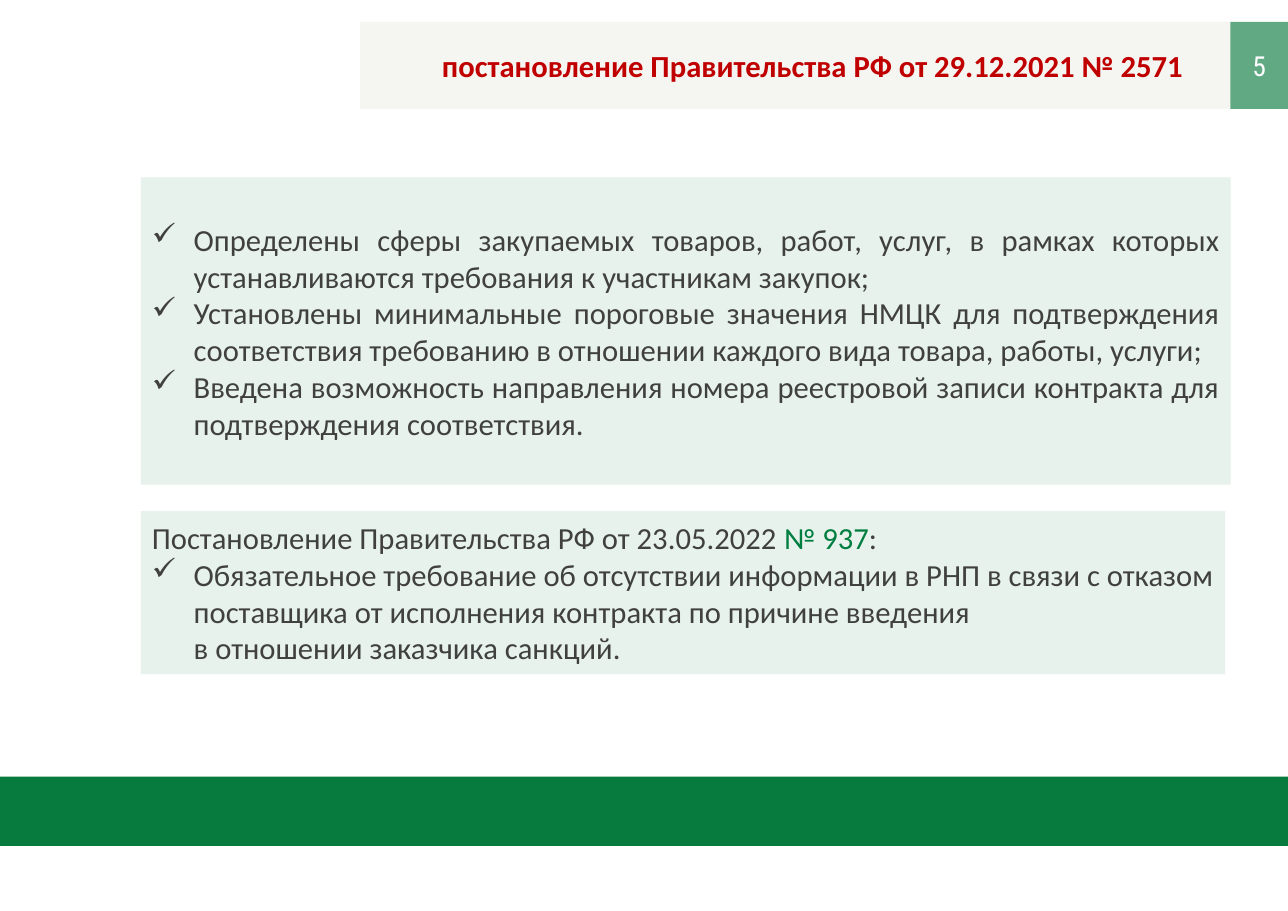
import pptx
import pptx.util
import pptx.dml.color
import pptx.enum.shapes
import pptx.enum.text
import pptx.oxml.ns
from lxml import etree

RGBColor = pptx.dml.color.RGBColor
ALIGN = pptx.enum.text.PP_ALIGN

GREEN = RGBColor(0x07, 0x7A, 0x3E)
LINK_GREEN = RGBColor(0x00, 0x7E, 0x40)
PALE_GREEN = RGBColor(0xE7, 0xF2, 0xEC)
PALE_GREY = RGBColor(0xF5, 0xF6, 0xF1)
RED = RGBColor(0xC0, 0x00, 0x00)
DARK = RGBColor(0x40, 0x40, 0x40)
WHITE = RGBColor(0xFF, 0xFF, 0xFF)

SLIDE_WIDTH = pptx.util.Inches(11.69)
SLIDE_HEIGHT = pptx.util.Inches(8.27)
HANGING = pptx.util.Inches(0.38)

REQUIREMENTS = [
    "Определены сферы закупаемых товаров, работ, услуг, в рамках которых "
    "устанавливаются требования к участникам закупок;",
    "Установлены минимальные пороговые значения НМЦК для подтверждения "
    "соответствия требованию в отношении каждого вида товара, работы, услуги;",
    "Введена возможность направления номера реестровой записи контракта для "
    "подтверждения соответствия.",
]
SANCTIONS_HEADING = [
    ("Постановление Правительства РФ от 23.05.2022 ", DARK),
    ("№ 937", LINK_GREEN),
    (":", DARK),
]
SANCTIONS = (
    "Обязательное требование об отсутствии информации в РНП в связи с отказом "
    "поставщика от исполнения контракта по причине введения\v"
    "в отношении заказчика санкций."
)


def percent_box(left, top, width, height):
    """Turn percentages of the slide into a box of lengths."""
    return (int(SLIDE_WIDTH * left / 100), int(SLIDE_HEIGHT * top / 100),
            int(SLIDE_WIDTH * width / 100), int(SLIDE_HEIGHT * height / 100))


def add_rectangle(slide, box, color):
    shape = slide.shapes.add_shape(pptx.enum.shapes.MSO_SHAPE.RECTANGLE, *box)
    shape.shadow.inherit = False
    shape.fill.solid()
    shape.fill.fore_color.rgb = color
    shape.line.fill.background()
    shape.text_frame.word_wrap = True
    shape.text_frame.vertical_anchor = pptx.enum.text.MSO_ANCHOR.MIDDLE
    return shape


def format_runs(paragraph, color, size=20, name="Calibri", bold=False):
    for run in paragraph.runs:
        run.font.size = pptx.util.Pt(size)
        run.font.name = name
        run.font.bold = bold
        run.font.color.rgb = color


def write_check_item(paragraph, text, alignment):
    paragraph.text = text
    paragraph.alignment = alignment
    properties = paragraph._p.get_or_add_pPr()
    properties.set("marL", str(HANGING))
    properties.set("indent", str(-HANGING))
    bullet = etree.SubElement(properties, pptx.oxml.ns.qn("a:buChar"))
    bullet.set("char", "✓")
    format_runs(paragraph, DARK)


def add_header(slide, box):
    left, top, width, height = box
    number_width = int(width * 0.062)
    title_width = width - number_width

    # Title band
    band = add_rectangle(slide, (left, top, title_width, height), PALE_GREY)
    band.text_frame.margin_left = int(title_width * 0.04)
    band.text_frame.margin_right = 0
    title = band.text_frame.paragraphs[0]
    title.text = "постановление Правительства РФ от 29.12.2021 № 2571"
    title.alignment = ALIGN.CENTER
    format_runs(title, RED, bold=True)

    # Page number on a translucent tile
    tile = add_rectangle(slide, (left + title_width, top, number_width, height), GREEN)
    color = tile.fill._xPr.find(".//" + pptx.oxml.ns.qn("a:srgbClr"))
    etree.SubElement(color, pptx.oxml.ns.qn("a:alpha")).set("val", "64000")
    number = tile.text_frame.paragraphs[0]
    number.text = "5"
    number.alignment = ALIGN.CENTER
    format_runs(number, WHITE, size=18, name="Roboto Condensed")


def add_requirements(slide, box):
    text_frame = add_rectangle(slide, box, PALE_GREEN).text_frame
    for index, text in enumerate(REQUIREMENTS):
        paragraph = text_frame.add_paragraph() if index else text_frame.paragraphs[0]
        write_check_item(paragraph, text, ALIGN.JUSTIFY)


def add_sanctions(slide, box):
    text_frame = add_rectangle(slide, box, PALE_GREEN).text_frame
    heading = text_frame.paragraphs[0]
    heading.alignment = ALIGN.LEFT
    for text, color in SANCTIONS_HEADING:
        heading.add_run().text = text
    format_runs(heading, DARK)
    for run, (text, color) in zip(heading.runs, SANCTIONS_HEADING):
        run.font.color.rgb = color
    write_check_item(text_frame.add_paragraph(), SANCTIONS, ALIGN.LEFT)


def main():
    presentation = pptx.Presentation()
    presentation.slide_width = SLIDE_WIDTH
    presentation.slide_height = SLIDE_HEIGHT
    slide = presentation.slides.add_slide(presentation.slide_layouts[6])

    add_header(slide, percent_box(27.97, 2.42, 72.03, 9.55))
    add_requirements(slide, percent_box(10.95, 19.47, 84.6, 33.74))
    # Footer band
    add_rectangle(slide, percent_box(0, 85.25, 100, 7.62), GREEN)
    add_sanctions(slide, percent_box(10.95, 56.11, 84.17, 17.9))

    presentation.save("out.pptx")


if __name__ == "__main__":
    main()
